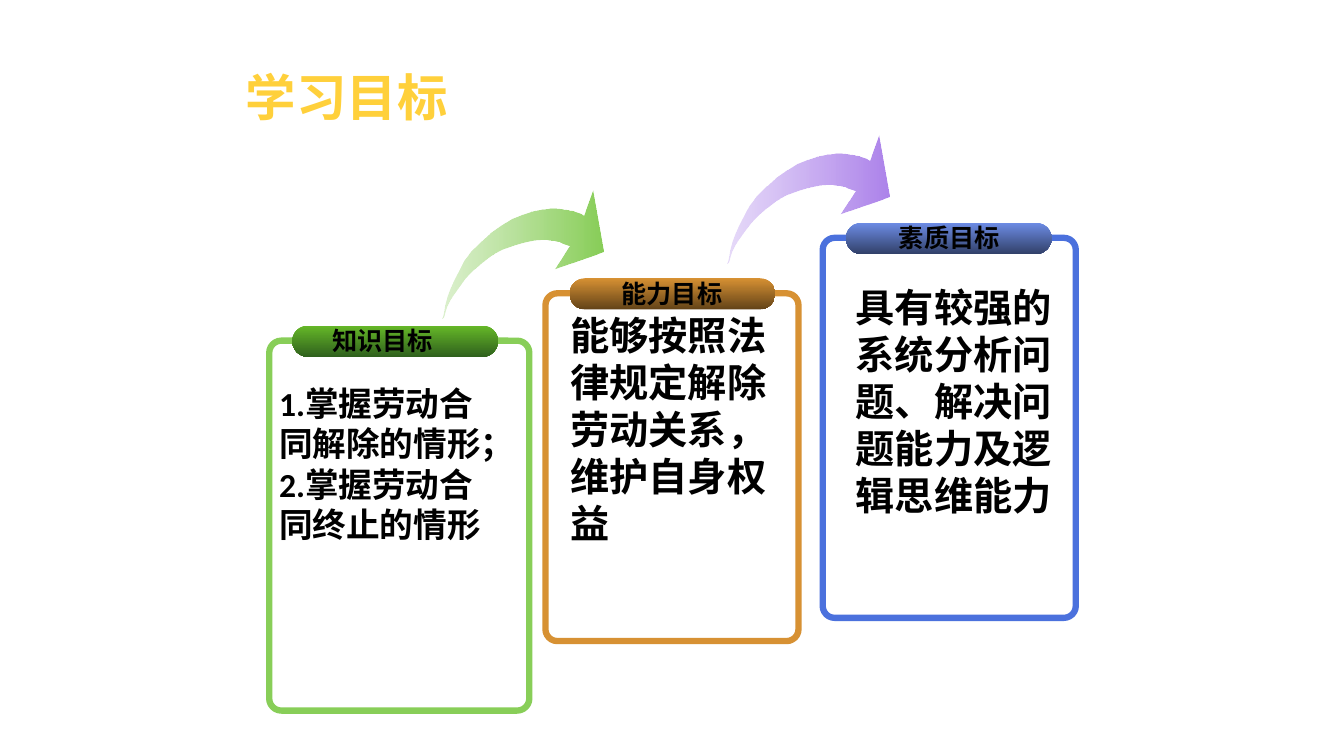
from lxml.etree import SubElement
from pptx import Presentation
from pptx.dml.color import RGBColor as RGB
from pptx.enum.shapes import MSO_SHAPE as Shape
from pptx.enum.text import MSO_ANCHOR as Anchor, MSO_AUTO_SIZE as Auto, PP_ALIGN as Align
from pptx.oxml.ns import qn
from pptx.util import Pt

PX = 9144  # 100 px to the inch
HAN = "Noto Sans CJK SC"
HUES = {
    "title": "FFD03B", "text": "000000",
    "green": "88CE58", "green top": "66B828", "green low": "2F611D", "green pale": "93D267",
    "brown": "D79133", "brown low": "634318",
    "blue": "4B71DD", "blue top": "6D8CE5", "blue low": "32416A",
    "violet": "AD83EB", "violet pale": "B48EED",
}

# Curved arrow outline, relative to its top left corner
ARROW = [
    (0, 127), (1, 126), (2, 124), (3, 120), (5, 114), (8, 108), (13, 101), (18, 94),
    (23, 87), (31, 79), (39, 72), (48, 65), (59, 59), (70, 55), (80, 52), (89, 50),
    (97, 49), (104, 49), (111, 50), (116, 51), (120, 53), (123, 54), (126, 55),
    (111, 78), (160, 61), (149, 0), (140, 25), (137, 23), (131, 21), (126, 20),
    (120, 19), (113, 18), (106, 18), (98, 19), (88, 21), (79, 24), (69, 28), (58, 35),
    (48, 42), (38, 51), (29, 60), (22, 69), (17, 79), (12, 88), (8, 97), (5, 105),
    (3, 112), (2, 118), (1, 123),
]


class Deck:
    def __init__(self, wide, high):
        self.show = Presentation()
        self.show.slide_width, self.show.slide_height = wide * PX, high * PX
        self.slide = self.show.slides.add_slide(self.show.slide_layouts[6])
        self.shapes = self.slide.shapes

    def hue(self, name):
        return RGB.from_string(HUES[name])

    def round(self, box, bend):
        shape = self.shapes.add_shape(Shape.ROUNDED_RECTANGLE, *(n * PX for n in box))
        shape.adjustments[0] = bend
        shape.shadow.inherit = False
        return shape

    def blend(self, shape, hues, angle, alpha=None):
        shape.line.fill.background()
        shape.fill.gradient()
        shape.fill.gradient_angle = angle
        stops = shape.fill.gradient_stops
        for stop, spot, name in zip(stops, (0, 1), hues):
            stop.position = spot
            stop.color.rgb = self.hue(name)
        if alpha:
            first = next(shape._element.iter(qn("a:gs")))
            SubElement(first[0], qn("a:alpha"), val=str(alpha * 1000))

    def frame(self, box, name):
        shape = self.round(box, 0.047)
        shape.fill.background()
        shape.line.color.rgb = self.hue(name)
        shape.line.width = Pt(4.5)

    def pill(self, box, hues):
        self.blend(self.round(box, 0.5), hues, 270)

    def arrow(self, left, top, hues):
        spots = [(left + x, top + y) for x, y in ARROW]
        path = self.shapes.build_freeform(*spots[0], scale=PX)
        path.add_line_segments(spots[1:], close=True)
        shape = path.convert_to_shape()
        shape.shadow.inherit = False
        self.blend(shape, hues, 0, 32)

    def text(self, box, words, size, name="text", face="Calibri", wrap=True, frame=None, para=None):
        body = self.shapes.add_textbox(*(n * PX for n in box)).text_frame
        line = body.paragraphs[0]
        run = line.add_run()
        run.text = words
        looks = {"size": Pt(size), "bold": True, "name": face}
        auto = {"word_wrap": wrap, "auto_size": Auto.SHAPE_TO_FIT_TEXT}
        for thing, style in ((run.font, looks), (body, auto | (frame or {})), (line, para or {})):
            for key, value in style.items():
                setattr(thing, key, value)
        run.font.color.rgb = self.hue(name)
        SubElement(run._r.get_or_add_rPr(), qn("a:ea"), typeface=HAN)


def main():
    deck = Deck(1333, 750)

    # Title
    deck.text((234, 64, 866, 71), "学习目标", 36, "title", HAN,
              frame={"vertical_anchor": Anchor.MIDDLE, "auto_size": Auto.NONE},
              para={"line_spacing": 0.9})

    # Cards: frame, pill corner, label corner, text box
    cards = [
        ((267, 338, 258, 367), "green", (290, 323), ("green top", "green low"),
         (319, 318), "知识目标", (267, 375, 227, 170), 24,
         "1.掌握劳动合同解除的情形；2.掌握劳动合同终止的情形"),
        ((541, 291, 251, 345), "brown", (565, 276), ("brown", "brown low"),
         (606, 271), "能力目标", (556, 304, 227, 243), 28,
         "能够按照法律规定解除劳动关系，维护自身权益"),
        ((816, 236, 251, 377), "blue", (839, 221), ("blue top", "blue low"),
         (881, 216), "素质目标", (839, 276, 227, 290), 28,
         "具有较强的系统分析问题、解决问题能力及逻辑思维能力"),
    ]
    for edge, name, pill, hues, spot, label, box, size, words in cards:
        deck.frame(edge, name)
        deck.pill((*pill, 204, 31), hues)
        deck.text((*spot, 121, 40), label, 18, wrap=False, para={"alignment": Align.CENTER})
        deck.text(box, words, size)

    # Arrows from card to card
    deck.arrow(439, 189, ("green pale", "green"))
    deck.arrow(722, 134, ("violet pale", "violet"))

    deck.show.save("out.pptx")


if __name__ == "__main__":
    main()
